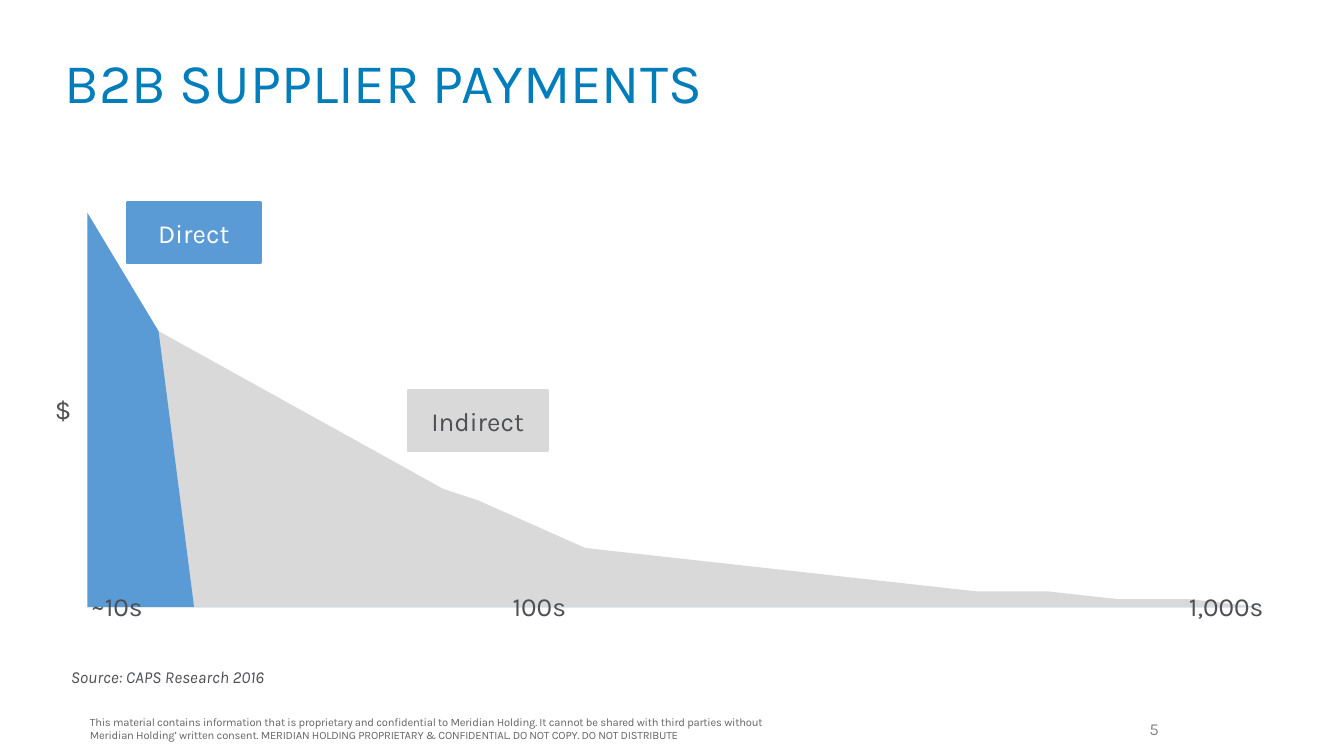
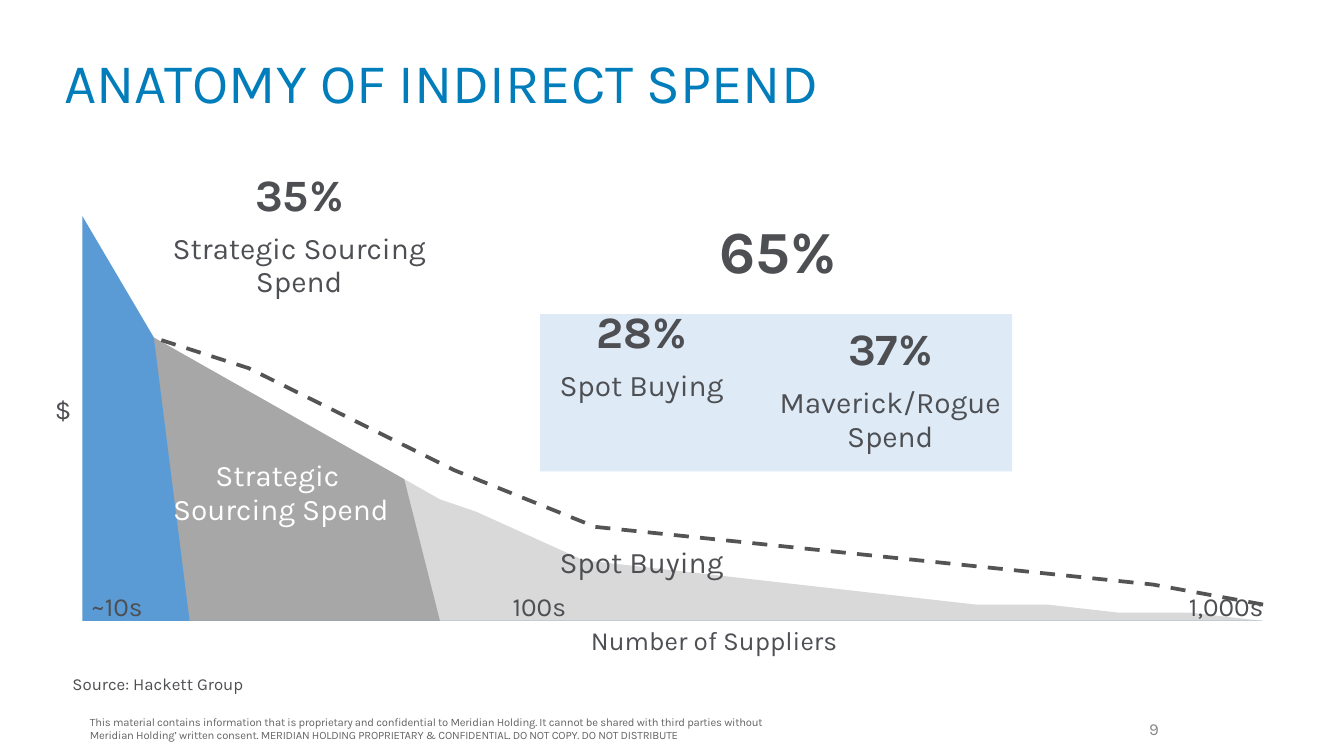
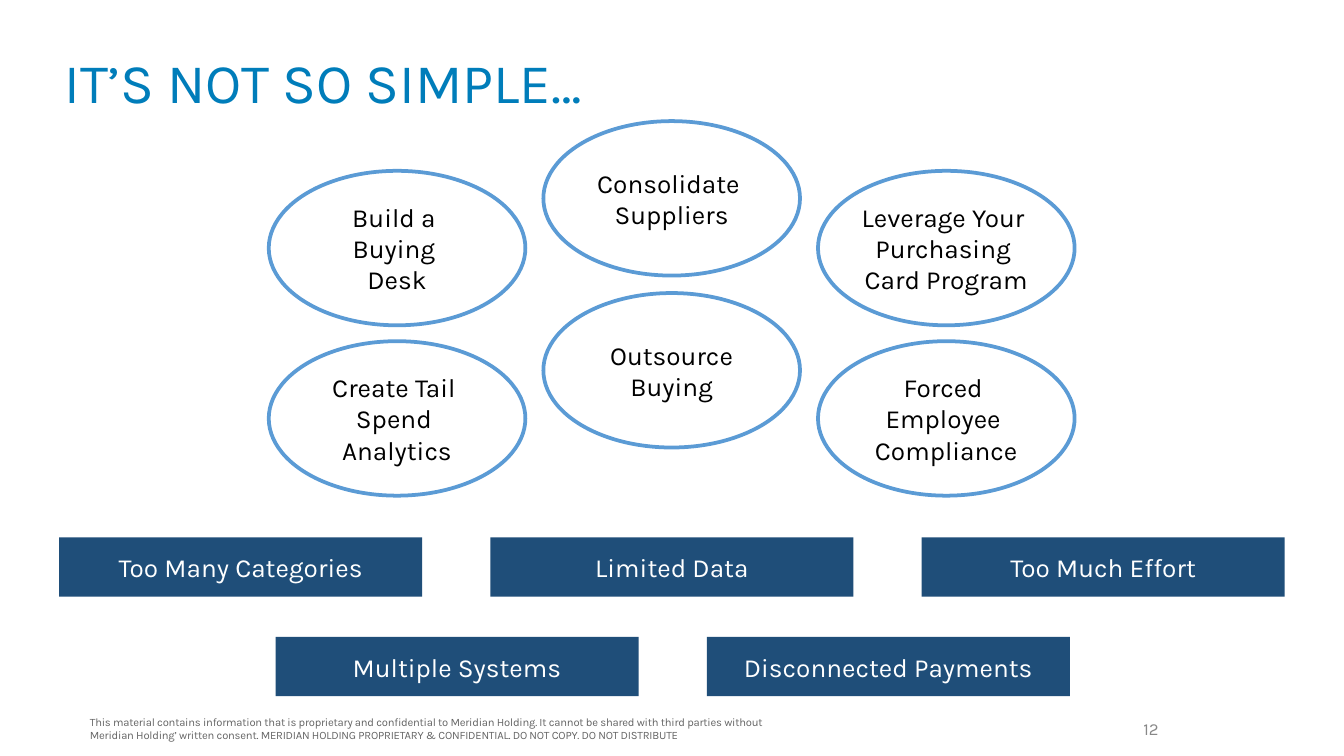
from lxml.etree import SubElement
from pptx import Presentation
from pptx.chart.data import CategoryChartData
from pptx.dml.color import RGBColor
from pptx.enum.chart import XL_CHART_TYPE
from pptx.enum.dml import MSO_LINE
from pptx.enum.shapes import MSO_SHAPE
from pptx.enum.text import MSO_ANCHOR, MSO_AUTO_SIZE, PP_ALIGN
from pptx.oxml.ns import qn
from pptx.util import Cm, Pt

HUES = {
    "title": "007DBA", "text": "4D4F53", "note": "646464", "page": "888888",
    "white": "FFFFFF", "black": "000000", "blue": "5B9BD5", "navy": "1F4E79",
    "pale": "DEEBF7", "light": "D9D9D9", "gray": "A7A7A7", "dash": "545454",
}
COLORS = {name: RGBColor.from_string(code) for name, code in HUES.items()}
FONT = "Karla"
LEFT, CENTER, RIGHT = PP_ALIGN.LEFT, PP_ALIGN.CENTER, PP_ALIGN.RIGHT
TOP, MIDDLE = MSO_ANCHOR.TOP, MSO_ANCHOR.MIDDLE
RECT, OVAL = MSO_SHAPE.RECTANGLE, MSO_SHAPE.OVAL


def write(shape, rows, color="text", align=CENTER, anchor=MIDDLE, pad=(0.25, 0.25),
          lead=None, italic=False, wrap=True):
    """Fill a shape with rows of (text, size, bold), one paragraph each."""
    frame = shape.text_frame
    frame.auto_size = MSO_AUTO_SIZE.NONE
    frame.word_wrap = wrap
    frame.vertical_anchor = anchor
    frame.margin_left = frame.margin_right = Cm(pad[0])
    frame.margin_top = frame.margin_bottom = Cm(pad[1])
    for i, (text, size, bold) in enumerate(rows):
        para = frame.add_paragraph() if i else frame.paragraphs[0]
        para.alignment = align
        if lead:
            para.line_spacing = Pt(lead)
            para.space_before = Pt(6 if i else 0)
        for j, part in enumerate(text.split("\n")):
            if j:
                para.add_line_break()
            run = para.add_run()
            run.text = part
            font = run.font
            font.name, font.size = FONT, Pt(size)
            font.bold, font.italic = bold, italic
            font.color.rgb = COLORS[color]


def put(slide, box, rows, fill=None, line=None, kind=RECT, **style):
    """Add a text box, or a preset shape when a fill is given."""
    area = [Cm(n) for n in box]
    if fill:
        shape = slide.shapes.add_shape(kind, *area)
        shape.shadow.inherit = False
        shape.fill.solid()
        shape.fill.fore_color.rgb = COLORS[fill]
        if line:
            shape.line.color.rgb = COLORS[line]
            shape.line.width = Pt(2)
        else:
            shape.line.fill.background()
    else:
        shape = slide.shapes.add_textbox(*area)
    write(shape, rows, **style)
    return shape


deck = Presentation()
deck.slide_width, deck.slide_height = Cm(25.4), Cm(14.29)

# Titles, notices and page numbers
NOTICE = [
    "This material contains information that is proprietary and confidential to "
    "Meridian Holding. It cannot be shared with third parties without",
    "Meridian Holding’ written consent. MERIDIAN HOLDING PROPRIETARY & CONFIDENTIAL. "
    "DO NOT COPY. DO NOT DISTRIBUTE",
]
TITLES = [("B2B SUPPLIER PAYMENTS", 5), ("ANATOMY OF INDIRECT SPEND", 9),
          ("IT’S NOT SO SIMPLE…", 12)]
slides = []
for name, page in TITLES:
    slide = deck.slides.add_slide(deck.slide_layouts[5])
    title = slide.shapes.title
    title.left, title.top, title.width, title.height = Cm(1.12), Cm(0.51), Cm(23.16), Cm(2.03)
    write(title, [(name, 30, False)], "title", LEFT, pad=(0.1, 0.1))
    put(slide, (16.28, 13.49, 5.72, 0.58), [(str(page), 9, False)],
        color="page", align=RIGHT, pad=(0.1, 0.1))
    note = put(slide, (1.7, 13.39, 18.69, 0.76), [(row, 6, False) for row in NOTICE],
               color="note", align=LEFT, anchor=TOP, pad=(0, 0.13))
    for para in note.text_frame.paragraphs:
        para.runs[0].font._element.set("spc", "-10")
    slides.append(slide)
pay, spend, plan = slides

# Spend curves: each band covers a range of the same curve
CURVE = [100, 85, *range(70, 29, -5), 27, 23, 19, *range(15, 3, -1),
         4, 4, 3, 2, 2, 2, 1, 0]
CHARTS = [
    (pay, (1.19, 2.36, 23.11, 9.58), (0.02, 0.018, 0.96, 0.934),
     [(0, 2, "blue"), (2, 14, "light"), (14, 33, "light")]),
    (spend, (1.09, 2.36, 23.24, 9.58), (0.02, 0.02, 0.96, 0.959),
     [(0, 2, "blue"), (2, 9, "gray"), (9, 33, "light")]),
]
AXIS = [("$", 0.71, 7.14, 0.89), ("~10s", 1.02, 10.87, 1.93),
        ("100s", 9.02, 10.87, 1.93), ("1,000s", 21.87, 10.87, 2.26)]
for slide, box, inner, bands in CHARTS:
    data = CategoryChartData()
    data.categories = [str(i + 1) for i in range(len(CURVE))]
    for n, (first, last, _) in enumerate(bands, 1):
        data.add_series(f"Series {n}", [v if first <= i <= last else None
                                        for i, v in enumerate(CURVE)])
    chart = slide.shapes.add_chart(XL_CHART_TYPE.AREA, *[Cm(n) for n in box], data).chart
    chart.has_title = chart.has_legend = False
    chart.font.name, chart.font.size = "Roboto", Pt(10)
    chart.font.color.rgb = COLORS["text"]
    axis = chart.value_axis
    axis.minimum_scale, axis.maximum_scale = 0, 120
    axis.has_major_gridlines = False
    axis.visible = chart.category_axis.visible = False
    plot = chart.plots[0]
    plot.vary_by_categories = False
    for series, band in zip(plot.series, bands):
        series.format.fill.solid()
        series.format.fill.fore_color.rgb = COLORS[band[2]]
        series.format.line.fill.background()
    for blank in chart.element.xpath(".//c:dispBlanksAs"):
        blank.set("val", "zero")
    area = chart.element.xpath(".//c:plotArea")[0]
    for old in area.findall(qn("c:layout")):
        area.remove(old)
    layout = SubElement(area, qn("c:layout"))
    area.insert(0, layout)
    manual = SubElement(layout, qn("c:manualLayout"))
    keys = ["layoutTarget", "xMode", "yMode", "x", "y", "w", "h"]
    for key, val in zip(keys, ["inner", "edge", "edge", *inner]):
        SubElement(manual, qn("c:" + key)).set("val", str(val))
    for text, x, y, wide in AXIS:
        put(slide, (x, y, wide, 1.57), [(text, 14, False)], align=RIGHT, anchor=TOP, lead=18)

# Payments
put(pay, (1.09, 12.47, 13.28, 0.64), [("Source: CAPS Research 2016", 9, False)], "white",
    align=LEFT, anchor=TOP, pad=(0.25, 0.13), italic=True)
put(pay, (2.41, 3.84, 2.51, 1.12), [("Direct", 14, False)], "blue", "blue", color="white")
put(pay, (7.72, 7.39, 2.62, 1.12), [("Indirect", 14, False)], "light", "light")

# Anatomy of spend
put(spend, (1.12, 12.6, 13.28, 0.64), [("Source: Hackett Group", 9, False)], "white",
    align=LEFT, anchor=TOP, pad=(0.25, 0.13))
put(spend, (10.21, 5.94, 8.92, 2.97), [], "pale")
LABELS = [
    ((10.06, 11.51, 6.88, 1.57), [("Number of Suppliers", 14, False)], "text"),
    ((9.42, 10.06, 5.41, 1.57), [("Spot Buying", 16, False)], "text"),
    ((9.42, 5.87, 5.41, 2.24), [("28%", 24, True), ("Spot Buying", 16, False)], "text"),
    ((2.54, 8.43, 5.54, 2.24), [("Strategic \nSourcing Spend", 16, False)], "white"),
    ((2.95, 3.28, 5.41, 2.87),
     [("35%", 24, True), ("Strategic Sourcing Spend", 16, False)], "text"),
    ((14.12, 6.2, 5.41, 2.87),
     [("37%", 24, True), ("Maverick/Rogue\nSpend", 16, False)], "text"),
    ((11.99, 4.52, 5.41, 1.57), [("65%", 32, True)], "text"),
]
for box, rows, color in LABELS:
    put(spend, box, rows, color=color, anchor=TOP, lead=18)
TREND = [(3.05, 6.43), (4.7, 6.96), (8.59, 8.89), (11.25, 9.96), (21.79, 11.05), (24.05, 11.46)]
points = [(Cm(x), Cm(y)) for x, y in TREND]
pen = spend.shapes.build_freeform(*points[0])
pen.add_line_segments(points[1:], close=False)
trend = pen.convert_to_shape()
trend.shadow.inherit = False
trend.fill.background()
trend.line.color.rgb = COLORS["dash"]
trend.line.width = Pt(2)
trend.line.dash_style = MSO_LINE.DASH

# Options and obstacles
BARS = [(1.12, 10.16, ["Too Many Categories", "Limited Data", "Too Much Effort"]),
        (5.21, 12.04, ["Multiple Systems", "Disconnected Payments"])]
for left, top, names in BARS:
    for i, name in enumerate(names):
        put(plan, (left + 8.15 * i, top, 6.86, 1.12), [(name, 14, False)], "navy",
            color="white", pad=(0.25, 0))
OVALS = [
    (0, 3.23, ["Build a ", "Buying ", "Desk"]),
    (1, 2.29, ["Consolidate ", "Suppliers"]),
    (2, 3.23, ["Leverage Your ", "Purchasing ", "Card Program"]),
    (1, 5.54, ["Outsource", "Buying"]),
    (0, 6.45, ["Create Tail ", "Spend ", "Analytics"]),
    (2, 6.45, ["Forced ", "Employee ", "Compliance"]),
]
for col, top, rows in OVALS:
    put(plan, (5.08 + 5.19 * col, top, 4.85, 2.92), [(row, 14, False) for row in rows],
        "white", "blue", OVAL, color="black", wrap=False)

deck.save("out.pptx")
